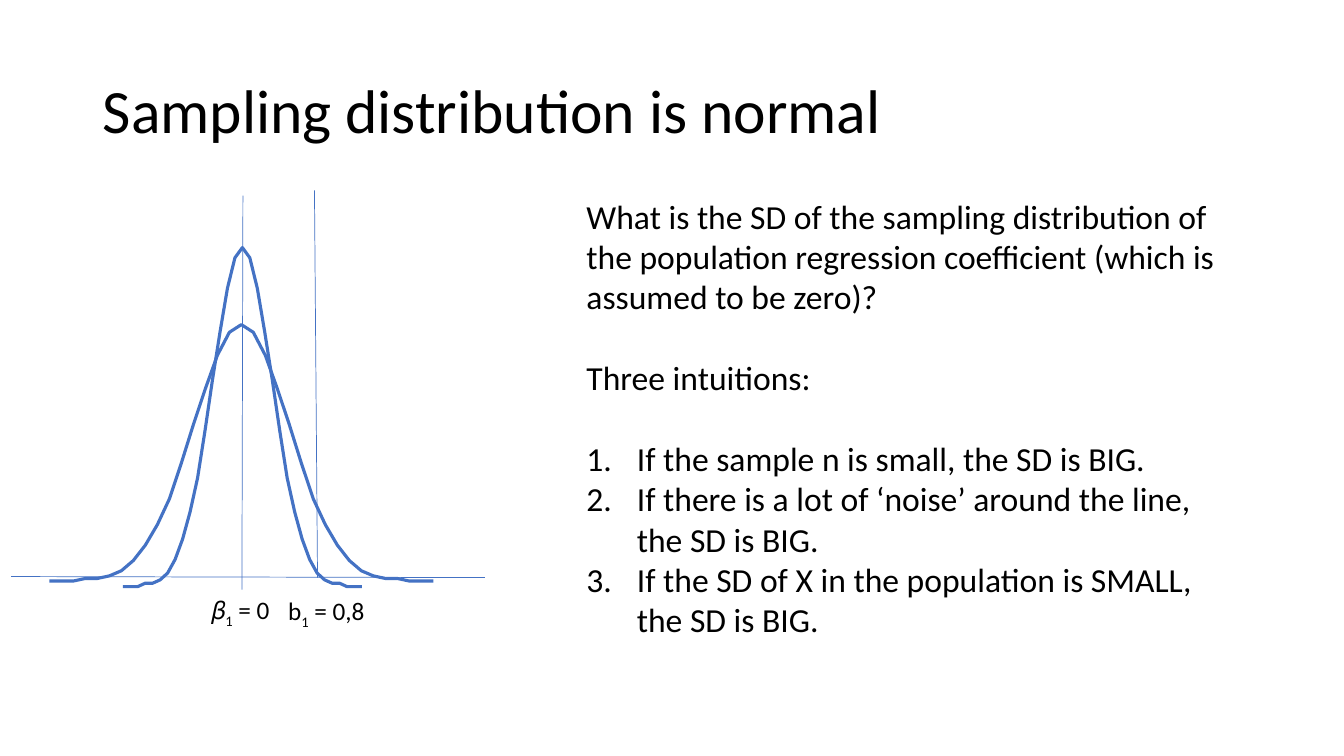
"""Build the slide on the sampling distribution of a regression coefficient."""
from dataclasses import dataclass
from math import exp

from lxml.etree import SubElement
from pptx import Presentation
from pptx.chart.data import CategoryChartData
from pptx.dml.color import RGBColor
from pptx.enum.chart import XL_CHART_TYPE as ChartType
from pptx.enum.shapes import MSO_CONNECTOR as Connector
from pptx.enum.text import MSO_ANCHOR as Anchor, MSO_AUTO_SIZE as AutoSize, PP_ALIGN as Align
from pptx.oxml.ns import qn
from pptx.slide import Slide
from pptx.util import Pt

COLORS = {"text": "000000", "curve": "4472C4"}
FONT = "Calibri"
STEPS = 16
SD_STEPS = 4
AXIS = {"minimum_scale": 0, "maximum_scale": 113, "has_major_gridlines": False, "visible": False}


@dataclass
class Curve:
    """A bell curve: chart box in points and plot area as fractions of it."""
    box: tuple[float, float, float, float]
    plot: tuple[float, float, float, float]


@dataclass
class Rule:
    """A thin straight line given by its end points."""
    ends: tuple[float, float, float, float]


@dataclass
class Label:
    """A coefficient with a subscript 1 and its value."""
    box: tuple[float, float, float, float]
    symbol: str
    value: str


@dataclass
class Para:
    """A paragraph of the explanation."""
    text: str
    gap: float = 0
    numbered: bool = False


CURVES = [
    Curve((18.72, 194.4, 307.44, 227.52), (0.04, 0.06, 0.92, 0.91)),
    Curve((81.36, 139.68, 183.6, 285.12), (0.02, 0.02, 0.96, 0.96)),
]
RULES = [
    Rule((7.92, 411.84, 346.32, 412.56)),
    Rule((173.52, 139.68, 172.8, 421.2)),
    Rule((224.64, 136.08, 226.8, 412.56)),
]
LABELS = [
    Label((144, 421.2, 58.32, 28.8), "𝛽", " = 0"),
    Label((198.72, 421.92, 70.56, 28.8), "b", " = 0,8"),
]
PARAS = [
    Para("What is the SD of the sampling distribution of the population regression "
         "coefficient (which is assumed to be zero)?"),
    Para("Three intuitions:", gap=29),
    Para("If the sample n is small, the SD is BIG.", gap=29, numbered=True),
    Para("If there is a lot of ‘noise’ around the line, the SD is BIG.", numbered=True),
    Para("If the SD of X in the population is SMALL, the SD is BIG.", numbered=True),
]


def set_all(target: object, values: dict) -> None:
    """Set each attribute in values on the target."""
    for name, value in values.items():
        setattr(target, name, value)


def add_run(p, text: str, size: float):
    """Add a run of black text and return it."""
    r = p.add_run()
    r.text = text
    set_all(r.font, {"name": FONT, "size": Pt(size)})
    r.font.color.rgb = RGBColor.from_string(COLORS["text"])
    return r


def add_title(slide: Slide, text: str) -> None:
    """Place and fill the title placeholder."""
    s = slide.shapes.title
    set_all(s, {"left": Pt(66.24), "top": Pt(28.8), "width": Pt(828), "height": Pt(104.4)})
    set_all(s.text_frame, {"vertical_anchor": Anchor.MIDDLE, "auto_size": AutoSize.NONE})
    p = s.text_frame.paragraphs[0]
    set_all(p, {"alignment": Align.LEFT, "line_spacing": 0.9})
    add_run(p, text, 44)


def add_curve(slide: Slide, curve: Curve) -> None:
    """Draw a normal density as a line chart without axes."""
    steps = range(-STEPS, STEPS + 1)
    data = CategoryChartData()
    data.categories = [str(k + STEPS + 1) for k in steps]
    data.add_series("Series 1", [round(100 * exp(-((k / SD_STEPS) ** 2) / 2)) for k in steps])
    chart = slide.shapes.add_chart(ChartType.LINE, *map(Pt, curve.box), data).chart
    set_all(chart, {"has_legend": False, "has_title": False})
    set_all(chart.font, {"name": FONT, "size": Pt(10)})
    chart.font.color.rgb = RGBColor.from_string(COLORS["text"])
    set_all(chart.value_axis, AXIS)
    chart.category_axis.visible = False
    plot = chart.plots[0]
    plot.vary_by_categories = False
    series = plot.series[0]
    series.smooth = False
    series.format.line.width = Pt(2.25)
    series.format.line.color.rgb = RGBColor.from_string(COLORS["curve"])
    area = chart._chartSpace.chart.plotArea
    layout = area.find(qn("c:layout"))
    if layout is None:
        layout = SubElement(area, qn("c:layout"))
        area.insert(0, layout)
    manual = SubElement(layout, qn("c:manualLayout"))
    parts = {"layoutTarget": "inner", "xMode": "edge", "yMode": "edge"}
    parts.update(zip("xywh", map(str, curve.plot)))
    for tag, value in parts.items():
        SubElement(manual, qn(f"c:{tag}")).set("val", value)


def add_rule(slide: Slide, rule: Rule) -> None:
    """Draw a thin line without a shadow."""
    s = slide.shapes.add_connector(Connector.STRAIGHT, *map(Pt, rule.ends))
    s.line.width = Pt(0.5)
    s.line.color.rgb = RGBColor.from_string(COLORS["curve"])
    SubElement(s._element.spPr, qn("a:effectLst"))


def add_label(slide: Slide, label: Label) -> None:
    """Write a coefficient label under the curves."""
    tf = slide.shapes.add_textbox(*map(Pt, label.box)).text_frame
    set_all(tf, {"word_wrap": False, "auto_size": AutoSize.SHAPE_TO_FIT_TEXT})
    p = tf.paragraphs[0]
    add_run(p, label.symbol, 18)
    r = add_run(p, "1", 18)
    r._r.get_or_add_rPr().set("baseline", "-25000")
    add_run(p, label.value, 18)


def add_explanation(slide: Slide, paras: list[Para]) -> None:
    """Write the question and the numbered intuitions."""
    tf = slide.shapes.add_textbox(Pt(411.84), Pt(136.08), Pt(482.4), Pt(326.88)).text_frame
    set_all(tf, {"word_wrap": True, "auto_size": AutoSize.SHAPE_TO_FIT_TEXT})
    for i, para in enumerate(paras):
        p = tf.add_paragraph() if i else tf.paragraphs[0]
        p.space_before = Pt(para.gap)
        add_run(p, para.text, 24)
        if para.numbered:
            props = p._p.get_or_add_pPr()
            props.set("marL", str(Pt(36)))
            props.set("indent", str(Pt(-36)))
            SubElement(props, qn("a:buFont")).set("typeface", "+mj-lt")
            SubElement(props, qn("a:buAutoNum")).set("type", "arabicPeriod")


def main() -> None:
    """Build and save the presentation."""
    prs = Presentation()
    set_all(prs, {"slide_width": Pt(960), "slide_height": Pt(540)})
    slide = prs.slides.add_slide(prs.slide_layouts[5])
    add_title(slide, "Sampling distribution is normal")
    add_explanation(slide, PARAS)
    for draw, items in ((add_curve, CURVES), (add_rule, RULES), (add_label, LABELS)):
        for item in items:
            draw(slide, item)
    prs.save("out.pptx")


if __name__ == "__main__":
    main()
